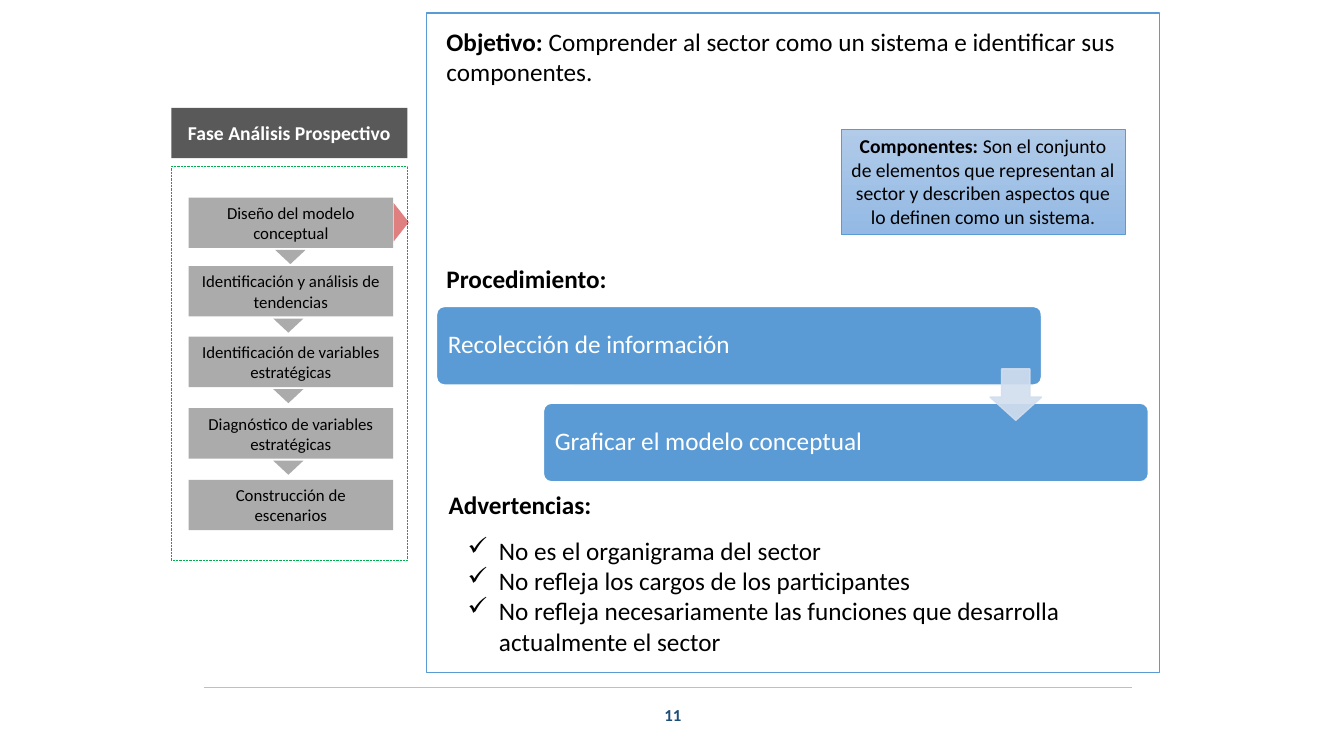
from lxml import etree
from pptx import Presentation
from pptx import util as u
from pptx.dml.color import RGBColor
from pptx.enum import dml, shapes, text
from pptx.oxml import ns

COLORS = {
    "black": "000000", "white": "FFFFFF", "gray": "595959", "rule": "BFBFBF",
    "green": "00B050", "red": "C00000", "blue": "5B9BD5", "pale": "D2DEEF",
    "navy": "1F4E79", "light": "B1CBE9", "medium": "93B9E4",
}
KINDS = shapes.MSO_SHAPE
ALIGN = text.PP_ALIGN
ANCHOR = text.MSO_ANCHOR
PHASES = [
    (1.96, "Diseño del modelo conceptual"),
    (2.64, "Identificación y análisis de tendencias"),
    (3.34, "Identificación de variables estratégicas"),
    (4.05, "Diagnóstico de variables estratégicas"),
    (4.76, "Construcción de escenarios"),
]
STEPS = [
    (4.33, 3.04, "Recolección de información"),
    (5.39, 4, "Graficar el modelo conceptual"),
]
WARNINGS = [
    "No es el organigrama del sector",
    "No refleja los cargos de los participantes",
    "No refleja necesariamente las funciones que desarrolla actualmente el sector",
]


def rgb(name):
    return RGBColor.from_string(COLORS[name])


def set_opacity(fill_format, percent):
    color = fill_format._xPr.find(ns.qn("a:solidFill"))[0]
    etree.SubElement(color, ns.qn("a:alpha"), val=str(percent * 1000))


def add_box(slide, kind, place, fill=None, line=None, width=1, opacity=100):
    shape = slide.shapes.add_shape(kind, *map(u.Inches, place))
    shape.shadow.inherit = False
    if fill:
        shape.fill.solid()
        shape.fill.fore_color.rgb = rgb(fill)
    else:
        shape.fill.background()
    if line:
        shape.line.color.rgb = rgb(line)
        shape.line.width = u.Pt(width)
    else:
        shape.line.fill.background()
    if opacity < 100:
        set_opacity(shape.fill, opacity)
        if line:
            set_opacity(shape.line.fill, opacity)
    return shape


def style_run(run, size, color, bold):
    run.font.name = "Calibri"
    run.font.size = u.Pt(size)
    run.font.bold = bold
    run.font.color.rgb = rgb(color)


def write(shape, content, size, color="black", bold=False, align=ALIGN.LEFT,
          anchor=ANCHOR.MIDDLE, wrap=True, lead=""):
    frame = shape.text_frame
    frame.word_wrap = wrap
    frame.vertical_anchor = anchor
    frame.text = lead or content
    if lead:
        frame.paragraphs[0].add_run().text = content
    for paragraph in frame.paragraphs:
        paragraph.alignment = align
        for index, run in enumerate(paragraph.runs):
            style_run(run, size, color, bold or (bool(lead) and index == 0))


def add_text(slide, place, content, size, **options):
    box = slide.shapes.add_textbox(*map(u.Inches, place))
    write(box, content, size, **options)
    return box


def add_checks(shape):
    for paragraph in shape.text_frame.paragraphs:
        properties = paragraph._p.get_or_add_pPr()
        properties.set("marL", str(u.Inches(0.31)))
        properties.set("indent", str(-u.Inches(0.31)))
        etree.SubElement(properties, ns.qn("a:buChar"), char="✓")


def add_footer(slide):
    rule = slide.shapes.add_connector(
        shapes.MSO_CONNECTOR.STRAIGHT, *map(u.Inches, (2.02, 6.82, 11.23, 6.82)))
    rule.line.color.rgb = rgb("rule")
    rule.line.width = u.Pt(0.75)
    etree.SubElement(rule._element.spPr, ns.qn("a:effectLst"))
    add_text(slide, (5.51, 6.89, 2.33, 0.4), "11", 12, color="navy", bold=True,
             align=ALIGN.CENTER)


def add_phases(slide):
    header = add_box(slide, KINDS.RECTANGLE, (1.7, 1.07, 2.34, 0.5), "gray")
    write(header, "Fase Análisis Prospectivo", 14, "white", True, ALIGN.CENTER)
    frame = add_box(slide, KINDS.RECTANGLE, (1.7, 1.65, 2.34, 3.91),
                    line="green", width=0.5)
    frame.line.dash_style = dml.MSO_LINE.ROUND_DOT
    for index, (top, name) in enumerate(PHASES):
        box = add_box(slide, KINDS.RECTANGLE, (1.87, top, 2.03, 0.5), "gray",
                      opacity=50)
        write(box, name, 12, align=ALIGN.CENTER)
        if index < len(PHASES) - 1:
            left = 2.73 if index == 0 else 2.71
            arrow = add_box(slide, KINDS.ISOSCELES_TRIANGLE,
                            (left, top + 0.52, 0.3, 0.14), "gray", opacity=50)
            arrow.rotation = 180
    marker = add_box(slide, KINDS.ISOSCELES_TRIANGLE, (3.79, 2.13, 0.38, 0.15),
                     "red", opacity=50)
    marker.rotation = 90


def add_steps(slide):
    for left, top, name in STEPS:
        step = add_box(slide, KINDS.ROUNDED_RECTANGLE, (left, top, 6, 0.78),
                       "blue", "white")
        step.adjustments[0] = 0.1
        step.text_frame.margin_left = u.Inches(0.09)
        write(step, name, 18, "white")
        step.text_frame.paragraphs[0].line_spacing = 0.9
    arrow = add_box(slide, KINDS.DOWN_ARROW, (9.82, 3.66, 0.51, 0.51),
                    "pale", "pale", opacity=90)
    arrow.adjustments[0] = 0.55
    arrow.adjustments[1] = 0.45


def add_components(slide):
    note = add_box(slide, KINDS.RECTANGLE, (8.34, 1.28, 2.82, 1.05),
                   line="blue", width=0.5)
    note.fill.gradient()
    note.fill.gradient_angle = 270
    for stop, color in zip(note.fill.gradient_stops, ("light", "medium")):
        stop.color.rgb = rgb(color)
    write(note, "Son el conjunto de elementos que representan al sector y "
          "describen aspectos que lo definen como un sistema.", 14,
          align=ALIGN.CENTER, anchor=ANCHOR.TOP, lead="Componentes: ")


def main():
    presentation = Presentation()
    presentation.slide_width = u.Inches(13.33)
    presentation.slide_height = u.Inches(7.5)
    slide = presentation.slides.add_slide(presentation.slide_layouts[6])
    add_footer(slide)
    add_phases(slide)
    add_box(slide, KINDS.RECTANGLE, (4.23, 0.13, 7.27, 6.54), line="blue")
    add_steps(slide)
    add_text(slide, (4.33, 0.21, 7.06, 1.01),
             "Comprender al sector como un sistema e identificar sus componentes.",
             18, anchor=ANCHOR.TOP, lead="Objetivo: ")
    add_components(slide)
    add_text(slide, (4.33, 2.56, 1.86, 0.4), "Procedimiento:", 18, bold=True,
             anchor=ANCHOR.TOP, wrap=False)
    warnings = add_text(slide, (4.54, 5.26, 6.69, 1.31), "\n".join(WARNINGS), 18,
                        anchor=ANCHOR.TOP)
    add_checks(warnings)
    add_text(slide, (4.35, 4.81, 1.69, 0.4), "Advertencias:", 18, bold=True,
             anchor=ANCHOR.TOP, wrap=False)
    presentation.save("out.pptx")


if __name__ == "__main__":
    main()
